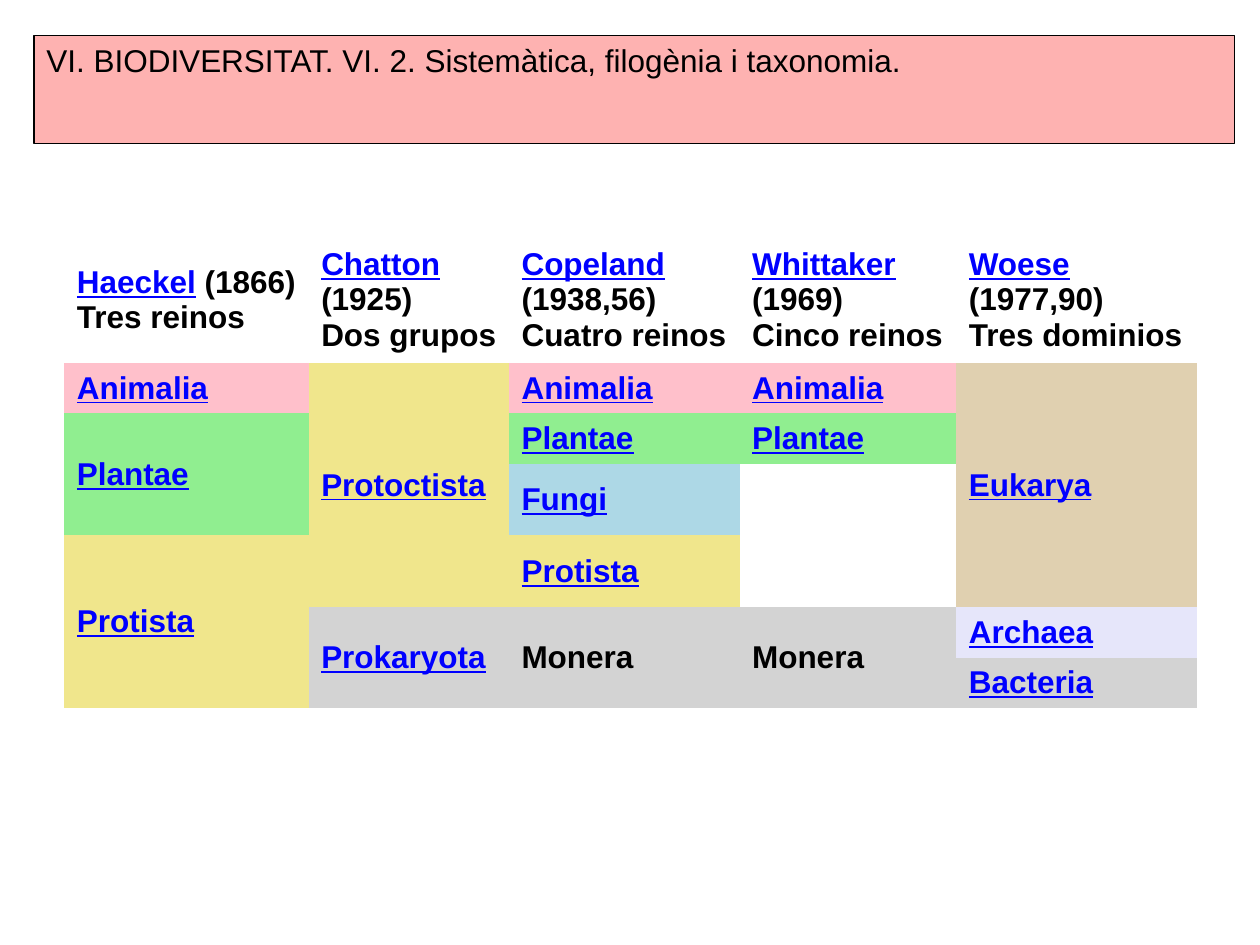
import pptx
import pptx.util
import pptx.dml.color
import pptx.enum.shapes
import pptx.enum.text

Inches = pptx.util.Inches
Pt = pptx.util.Pt
RGB = pptx.dml.color.RGBColor.from_string

THEME = {
    "font": "Arial", "size": Pt(18), "text": "000000", "linked": "0000FF",
    "banner": "FEB2B1", "border": "000000",
    "animal": "FFC0CB", "plant": "90EE90", "fungus": "ADD8E6", "protist": "F0E68C",
    "prokaryote": "D3D3D3", "eukaryote": "E0D0B0", "archaea": "E6E6FA",
}
NO_STYLE = "{2D5ABB26-0587-4C30-8999-92F81FD0307C}"


def add_text(paragraph, text, bold=True, linked=False):
    run = paragraph.add_run()
    run.text = text
    run.font.name = THEME["font"]
    run.font.size = THEME["size"]
    run.font.bold = bold
    run.font.underline = linked
    run.font.color.rgb = RGB(THEME["linked" if linked else "text"])


deck = pptx.Presentation()
deck.slide_width, deck.slide_height = Inches(10), Inches(7.5)
slide = deck.slides.add_slide(deck.slide_layouts[6])

banner = slide.shapes.add_shape(
    pptx.enum.shapes.MSO_SHAPE.RECTANGLE,
    Inches(0.27), Inches(0.28), Inches(9.53), Inches(0.86))
banner.shadow.inherit = False
banner.fill.solid()
banner.fill.fore_color.rgb = RGB(THEME["banner"])
banner.line.color.rgb = RGB(THEME["border"])
banner.line.width = Pt(0.75)
banner.text_frame.word_wrap = True
banner.text_frame.vertical_anchor = pptx.enum.text.MSO_ANCHOR.TOP
heading = banner.text_frame.paragraphs[0]
heading.alignment = pptx.enum.text.PP_ALIGN.LEFT
add_text(heading, "VI. BIODIVERSITAT. VI. 2. Sistemàtica, filogènia i taxonomia.", bold=False)

column_widths = [1.94, 1.59, 1.83, 1.72, 1.91]
row_heights = [1, 0.4, 0.4, 0.57, 0.57, 0.4, 0.4]
systems_frame = slide.shapes.add_table(
    len(row_heights), len(column_widths), Inches(0.51), Inches(1.88),
    Inches(sum(column_widths)), Inches(sum(row_heights)))
systems_frame.element.xpath(".//a:tableStyleId")[0].text = NO_STYLE
systems = systems_frame.table
systems.first_row = False
systems.horz_banding = False
for column, width in zip(systems.columns, column_widths):
    column.width = Inches(width)
for row, height in zip(systems.rows, row_heights):
    row.height = Inches(height)
for cell in systems.iter_cells():
    cell.fill.background()
    cell.vertical_anchor = pptx.enum.text.MSO_ANCHOR.MIDDLE

authors = [
    ("Haeckel", [" (1866)", "Tres reinos"]),
    ("Chatton", ["", "(1925)", "Dos grupos"]),
    ("Copeland", ["", "(1938,56)", "Cuatro reinos"]),
    ("Whittaker", ["", "(1969)", "Cinco reinos"]),
    ("Woese", ["", "(1977,90)", "Tres dominios"]),
]
for column, (author, (beside, *below)) in enumerate(authors):
    system = systems.cell(0, column).text_frame.paragraphs[0]
    add_text(system, author, linked=True)
    if beside:
        add_text(system, beside)
    for line in below:
        system.add_line_break()
        add_text(system, line)

taxa = [
    (1, 0, 1, "Animalia", "animal"),
    (2, 0, 2, "Plantae", "plant"),
    (4, 0, 3, "Protista", "protist"),
    (1, 1, 4, "Protoctista", "protist"),
    (5, 1, 2, "Prokaryota", "prokaryote"),
    (1, 2, 1, "Animalia", "animal"),
    (2, 2, 1, "Plantae", "plant"),
    (3, 2, 1, "Fungi", "fungus"),
    (4, 2, 1, "Protista", "protist"),
    (5, 2, 2, "Monera", "prokaryote"),
    (1, 3, 1, "Animalia", "animal"),
    (2, 3, 1, "Plantae", "plant"),
    (5, 3, 2, "Monera", "prokaryote"),
    (1, 4, 4, "Eukarya", "eukaryote"),
    (5, 4, 1, "Archaea", "archaea"),
    (6, 4, 1, "Bacteria", "prokaryote"),
]
for row, column, span, taxon, group in taxa:
    cell = systems.cell(row, column)
    if span > 1:
        cell.merge(systems.cell(row + span - 1, column))
    cell.fill.solid()
    cell.fill.fore_color.rgb = RGB(THEME[group])
    add_text(cell.text_frame.paragraphs[0], taxon, linked=taxon != "Monera")

deck.save("out.pptx")
